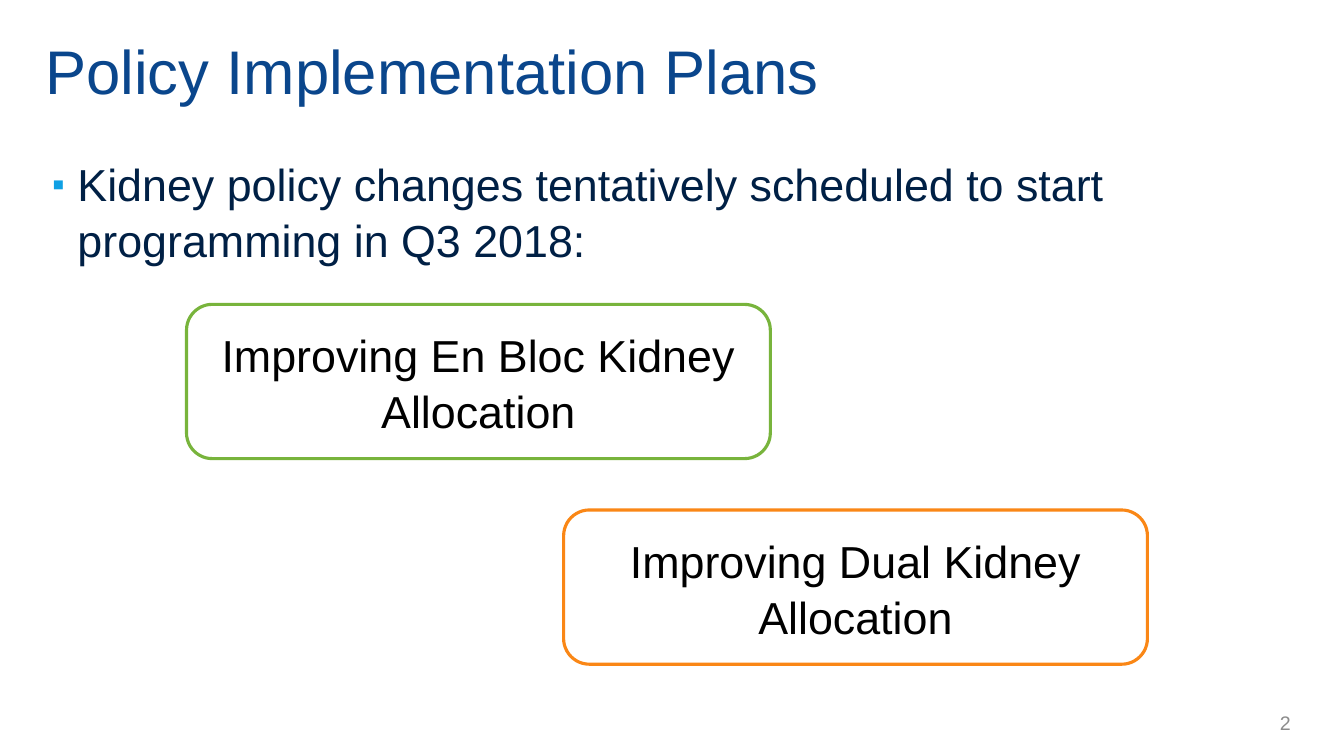
import pptx
import pptx.util
import pptx.dml.color
import pptx.enum.shapes
import pptx.enum.text
import pptx.oxml
import pptx.oxml.ns

PX = 9144
ALIGN = pptx.enum.text.PP_ALIGN
ANCHOR = pptx.enum.text.MSO_ANCHOR
COLORS = {
    "title": "0A468C",
    "body": "002045",
    "bullet": "0FA0E4",
    "number": "8C8C8C",
    "label": "000000",
    "card": "FFFFFF",
    "green": "78B43C",
    "orange": "FA8716",
}


def px(*lengths):
    return [pptx.util.Emu(n * PX) for n in lengths]


def rgb(name):
    return pptx.dml.color.RGBColor.from_string(COLORS[name])


def add_bullet(p, char, color, indent):
    pPr = p._p.get_or_add_pPr()
    pPr.set("marL", str(indent * PX))
    pPr.set("indent", str(-indent * PX))
    ns = pptx.oxml.ns.nsdecls("a")
    for xml in (
        f'<a:buClr {ns}><a:srgbClr val="{COLORS[color]}"/></a:buClr>',
        f'<a:buSzPct {ns} val="80000"/>',
        f'<a:buFont {ns} typeface="Arial"/>',
        f'<a:buChar {ns} char="{char}"/>',
    ):
        pPr.append(pptx.oxml.parse_xml(xml))


def write(tf, text, size=32, color="label", align=ALIGN.LEFT,
          anchor=ANCHOR.MIDDLE, spacing=1.05, insets=(10, 5, 10, 5), bullet=None):
    tf.word_wrap = True
    tf.vertical_anchor = anchor
    tf.margin_left, tf.margin_top, tf.margin_right, tf.margin_bottom = px(*insets)
    p = tf.paragraphs[0]
    p.alignment = align
    p.line_spacing = spacing
    if bullet:
        add_bullet(p, bullet, "bullet", 25)
    r = p.add_run()
    r.text = text
    r.font.name = "Arial"
    r.font.size = pptx.util.Pt(size)
    r.font.color.rgb = rgb(color)


def add_text(s, box, text, **style):
    write(s.shapes.add_textbox(*px(*box)).text_frame, text, **style)


def add_card(s, left, top, text, line):
    sp = s.shapes.add_shape(
        pptx.enum.shapes.MSO_SHAPE.ROUNDED_RECTANGLE, *px(left, top, 579, 153))
    sp.shadow.inherit = False
    sp.fill.solid()
    sp.fill.fore_color.rgb = rgb("card")
    sp.line.color.rgb = rgb(line)
    sp.line.width = pptx.util.Pt(2.25)
    write(sp.text_frame, text, align=ALIGN.CENTER)


def main():
    prs = pptx.Presentation()
    prs.slide_width, prs.slide_height = px(1333, 750)
    s = prs.slides.add_slide(prs.slide_layouts[6])
    add_text(s, (1064, 697, 226, 40), "2", size=14, color="number",
             align=ALIGN.RIGHT, spacing=1.0)
    add_text(s, (37, 17, 1274, 94), "Policy Implementation Plans", size=44,
             color="title", spacing=1.0, insets=(8, 15, 10, 5))
    add_text(s, (42, 148, 1246, 127),
             "Kidney policy changes tentatively scheduled to start programming in Q3 2018:",
             color="body", anchor=ANCHOR.TOP, bullet="▪")
    add_card(s, 185, 302, "Improving En Bloc Kidney Allocation", "green")
    add_card(s, 559, 506, "Improving Dual Kidney Allocation", "orange")
    prs.save("out.pptx")


if __name__ == "__main__":
    main()
